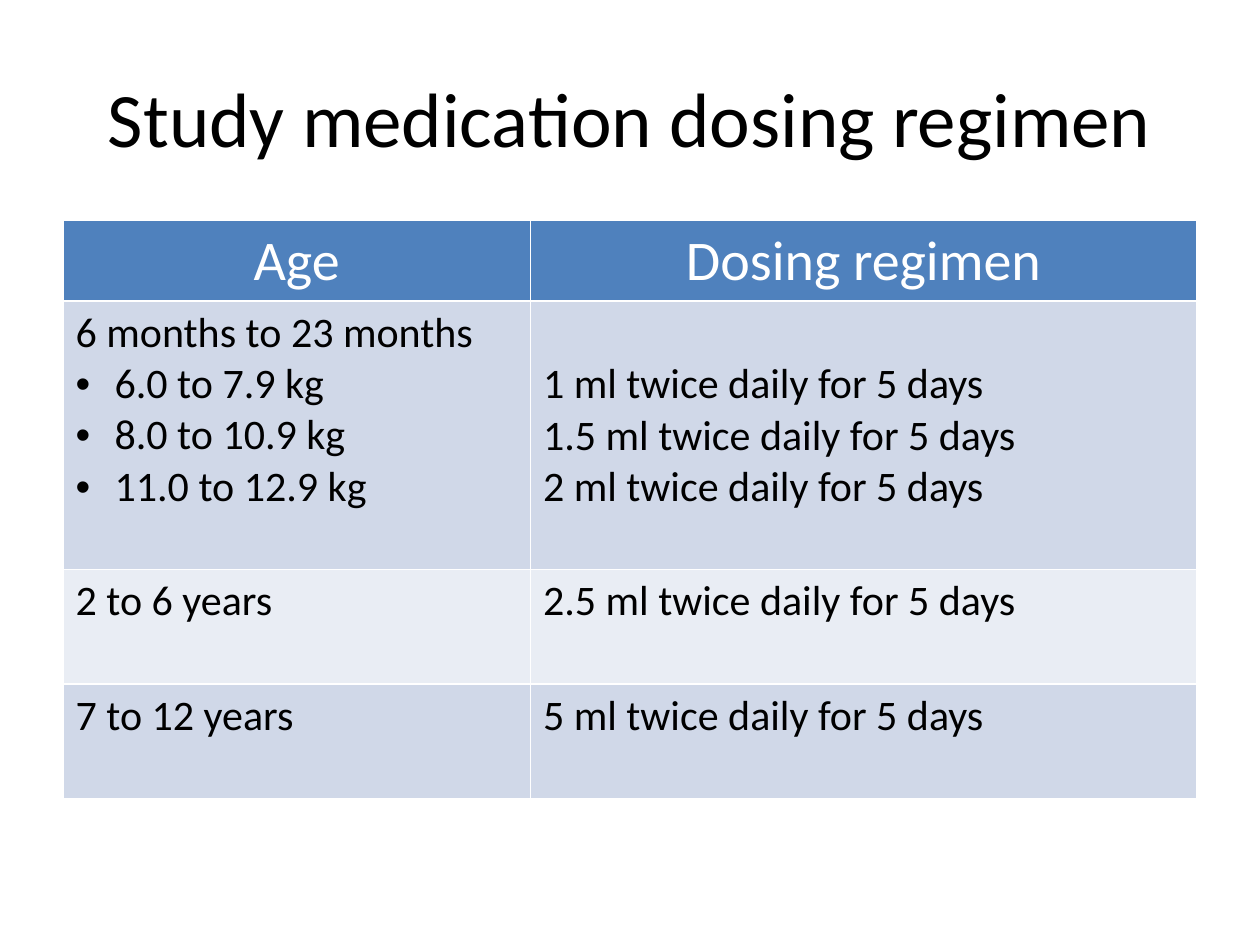
from dataclasses import dataclass

from lxml import etree
from pptx import Presentation
from pptx.dml.color import RGBColor
from pptx.enum import text
from pptx.oxml import ns
from pptx.util import Inches, Pt


@dataclass(frozen=True)
class Theme:
    font: str = "Calibri"
    title_size: int = 44
    header_size: int = 32
    body_size: int = 24
    ink: str = "000000"
    header_ink: str = "FFFFFF"
    header_fill: str = "4F81BD"
    bands: tuple[str, str] = ("D0D8E8", "E9EDF4")


@dataclass(frozen=True)
class DoseRow:
    age: str
    doses: tuple[str, ...]
    height: float
    weights: tuple[str, ...] = ()


THEME = Theme()
LEFT, WIDTH = 0.5, 9
COLUMN_WIDTHS = (3.71, 5.29)
HEADERS = ("Age", "Dosing regimen")
HEADER_HEIGHT = 0.64
CELL_MARGIN = 0.05
LINE_HEIGHT = 0.41
BULLET_INDENT = 0.31
DOSE_ROWS = (
    DoseRow(
        "6 months to 23 months",
        (
            "1 ml twice daily for 5 days",
            "1.5 ml twice daily for 5 days",
            "2 ml twice daily for 5 days",
        ),
        2.13,
        ("6.0 to 7.9 kg", "8.0 to 10.9 kg", "11.0 to 12.9 kg"),
    ),
    DoseRow("2 to 6 years", ("2.5 ml twice daily for 5 days",), 0.91),
    DoseRow("7 to 12 years", ("5 ml twice daily for 5 days",), 0.91),
)


def write_lines(text_frame, lines: tuple[str, ...], size: int, color: str,
                centered: bool = False) -> None:
    text_frame.text = "\n".join(lines)
    for paragraph in text_frame.paragraphs:
        if centered:
            paragraph.alignment = text.PP_ALIGN.CENTER
        for run in paragraph.runs:
            run.font.name = THEME.font
            run.font.size = Pt(size)
            run.font.bold = False
            run.font.color.rgb = RGBColor.from_string(color)


def add_bullet(paragraph) -> None:
    properties = paragraph._p.get_or_add_pPr()
    properties.set("marL", str(Inches(BULLET_INDENT)))
    properties.set("indent", str(-Inches(BULLET_INDENT)))
    etree.SubElement(properties, ns.qn("a:buFont"), typeface="Arial")
    etree.SubElement(properties, ns.qn("a:buChar"), char="•")


def fill_cell(cell, color: str) -> None:
    cell.fill.solid()
    cell.fill.fore_color.rgb = RGBColor.from_string(color)


def add_title(slide, title: str) -> None:
    shape = slide.shapes.add_textbox(
        Inches(LEFT), Inches(0.3), Inches(WIDTH), Inches(1.25))
    text_frame = shape.text_frame
    text_frame.word_wrap = True
    text_frame.vertical_anchor = text.MSO_ANCHOR.MIDDLE
    write_lines(text_frame, (title,), THEME.title_size, THEME.ink, centered=True)


def add_dose_table(slide) -> None:
    heights = (HEADER_HEIGHT, *(row.height for row in DOSE_ROWS))
    table = slide.shapes.add_table(
        len(heights), len(HEADERS), Inches(LEFT), Inches(1.75),
        Inches(WIDTH), Inches(sum(heights))).table
    for column, width in zip(table.columns, COLUMN_WIDTHS):
        column.width = Inches(width)
    for table_row, height in zip(table.rows, heights):
        table_row.height = Inches(height)

    # Header row
    for cell, header in zip(table.rows[0].cells, HEADERS):
        fill_cell(cell, THEME.header_fill)
        write_lines(cell.text_frame, (header,), THEME.header_size,
                    THEME.header_ink, centered=True)

    # Age groups and their doses
    for index, row in enumerate(DOSE_ROWS):
        age_cell, dose_cell = table.rows[index + 1].cells
        contents = ((age_cell, (row.age, *row.weights)), (dose_cell, row.doses))
        for cell, lines in contents:
            fill_cell(cell, THEME.bands[index % 2])
            write_lines(cell.text_frame, lines, THEME.body_size, THEME.ink)
        for paragraph in age_cell.text_frame.paragraphs[1:]:
            add_bullet(paragraph)
        if row.weights:  # doses line up with the weights, one line down
            dose_cell.margin_top = Inches(CELL_MARGIN + LINE_HEIGHT)


def main() -> None:
    presentation = Presentation()
    presentation.slide_width = Inches(10)
    presentation.slide_height = Inches(7.5)
    slide = presentation.slides.add_slide(presentation.slide_layouts[6])
    add_title(slide, "Study medication dosing regimen")
    add_dose_table(slide)
    presentation.save("out.pptx")


if __name__ == "__main__":
    main()
